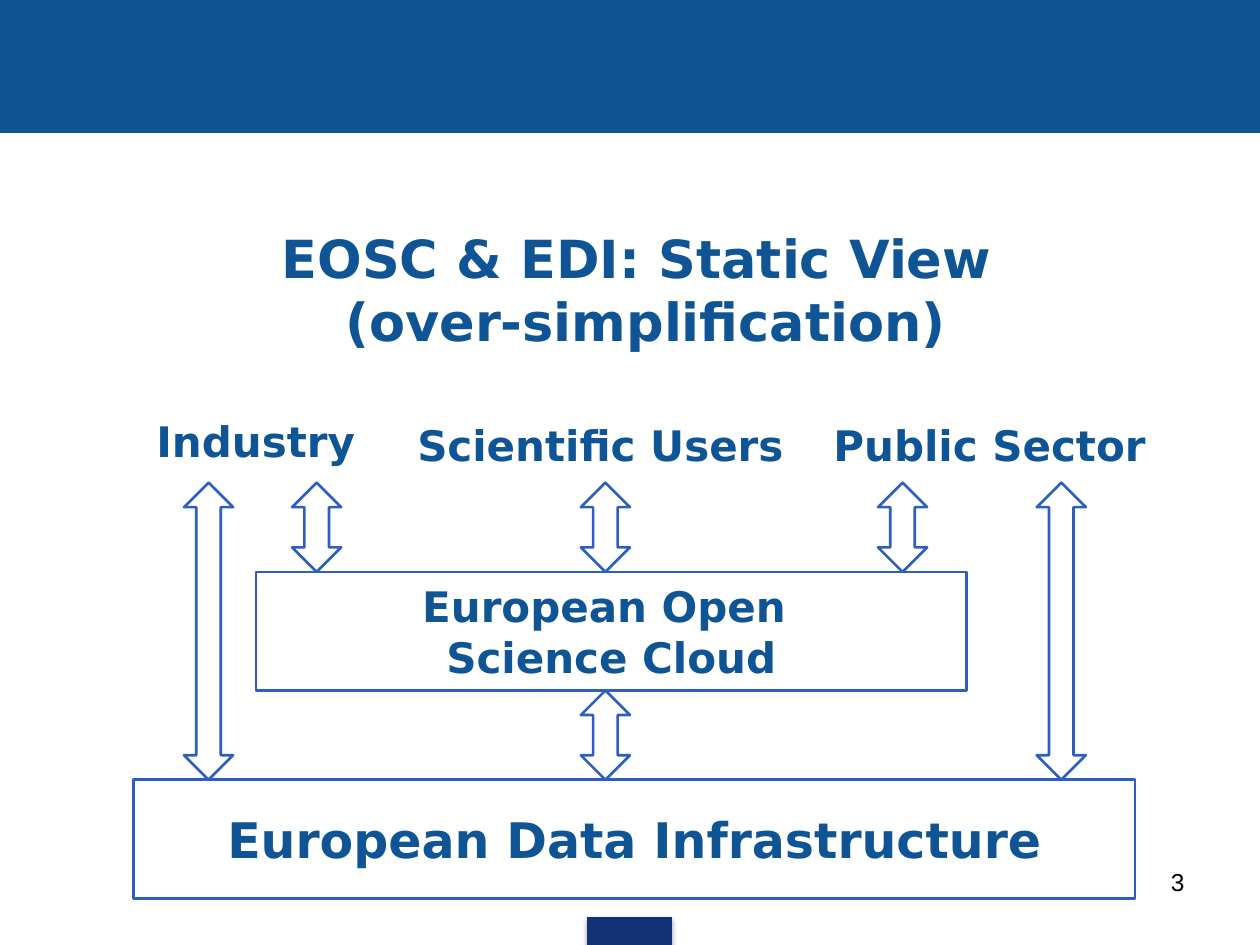
from lxml.etree import SubElement
from pptx import Presentation
from pptx.dml.color import RGBColor
from pptx.enum.shapes import MSO_SHAPE
from pptx.enum.text import MSO_ANCHOR, PP_ALIGN
from pptx.oxml.ns import qn
from pptx.util import Cm, Pt

BLUE = RGBColor(0x0F, 0x54, 0x94)
NAVY = RGBColor(0x13, 0x31, 0x76)
OUTLINE = RGBColor(0x2D, 0x5E, 0xC1)
BLACK = RGBColor(0, 0, 0)

USERS_BOTTOM = 9.73
CLOUD_TOP = 11.53
CLOUD_BOTTOM = 13.92
DATA_TOP = 15.72
BOX_HEIGHT = 2.39
ARROW_WIDTH = 0.99

deck = Presentation()
deck.slide_width = Cm(25.4)
deck.slide_height = Cm(19.05)
page = deck.slides.add_slide(deck.slide_layouts[6])


def add_figure(kind, left, top, width, height, line, weight, fill=None):
    figure = page.shapes.add_shape(kind, Cm(left), Cm(top), Cm(width), Cm(height))
    if fill is None:
        figure.fill.background()
    else:
        figure.fill.solid()
        figure.fill.fore_color.rgb = fill
    figure.line.color.rgb = line
    figure.line.width = Pt(weight)
    figure.shadow.inherit = False
    return figure


def write(box, lines, size, anchor=MSO_ANCHOR.MIDDLE, align=PP_ALIGN.CENTER,
          font="DejaVu Sans", color=BLUE, bold=True):
    frame = box.text_frame
    frame.word_wrap = True
    frame.vertical_anchor = anchor
    para = frame.paragraphs[0]
    para.alignment = align
    for index, line in enumerate(lines):
        if index:
            para.add_line_break()
        span = para.add_run()
        span.text = line
        span.font.name = font
        span.font.size = Pt(size)
        span.font.bold = bold
        span.font.color.rgb = color
    return para


add_figure(MSO_SHAPE.RECTANGLE, 0, 0, 25.4, 2.67, BLUE, 0.75, BLUE)

footer_tab = add_figure(MSO_SHAPE.RECTANGLE, 11.84, 18.49, 1.7, 0.56, NAVY, 0.75, NAVY)
effects = footer_tab.element.spPr.find(qn("a:effectLst"))
shadow = SubElement(effects, qn("a:outerShdw"), blurRad=str(Pt(3.1)),
                    dist=str(Pt(1.8)), dir="5400000", rotWithShape="0")
shade = SubElement(shadow, qn("a:srgbClr"), val="000000")
SubElement(shade, qn("a:alpha"), val="35000")

title = page.shapes.add_textbox(Cm(1.09), Cm(3.73), Cm(22.86), Cm(4.19))
title_para = write(title, ["EOSC & EDI: Static View ", "(over-simplification)"], 30)
title_para._p.get_or_add_pPr().set("marL", str(Cm(1)))

for left, top, width, lines, size in [
    (2.69, DATA_TOP, 20.19, ["European Data Infrastructure"], 28),
    (5.16, CLOUD_TOP, 14.33, ["European Open ", "Science Cloud"], 24),
]:
    layer = add_figure(MSO_SHAPE.RECTANGLE, left, top, width, BOX_HEIGHT, OUTLINE, 1.5)
    write(layer, lines, size)

for left, top, width, name in [
    (2.31, 8.26, 5.69, "Industry"),
    (7.9, 8.33, 8.41, "Scientific Users"),
    (16.5, 8.33, 6.9, "Public Sector"),
]:
    label = page.shapes.add_textbox(Cm(left), Cm(top), Cm(width), Cm(1.27))
    write(label, [name], 24, MSO_ANCHOR.TOP)

for left, top, bottom in [
    (3.71, USERS_BOTTOM, DATA_TOP),
    (5.89, USERS_BOTTOM, CLOUD_TOP),
    (11.71, USERS_BOTTOM, CLOUD_TOP),
    (17.7, USERS_BOTTOM, CLOUD_TOP),
    (20.9, USERS_BOTTOM, DATA_TOP),
    (11.71, CLOUD_BOTTOM, DATA_TOP),
]:
    add_figure(MSO_SHAPE.UP_DOWN_ARROW, left, top, ARROW_WIDTH, bottom - top, OUTLINE, 1.5)

number = page.shapes.add_textbox(Cm(18.21), Cm(17.35), Cm(5.92), Cm(1.32))
write(number, ["3"], 14, MSO_ANCHOR.TOP, PP_ALIGN.RIGHT, "Arial", BLACK, False)

deck.save("out.pptx")
